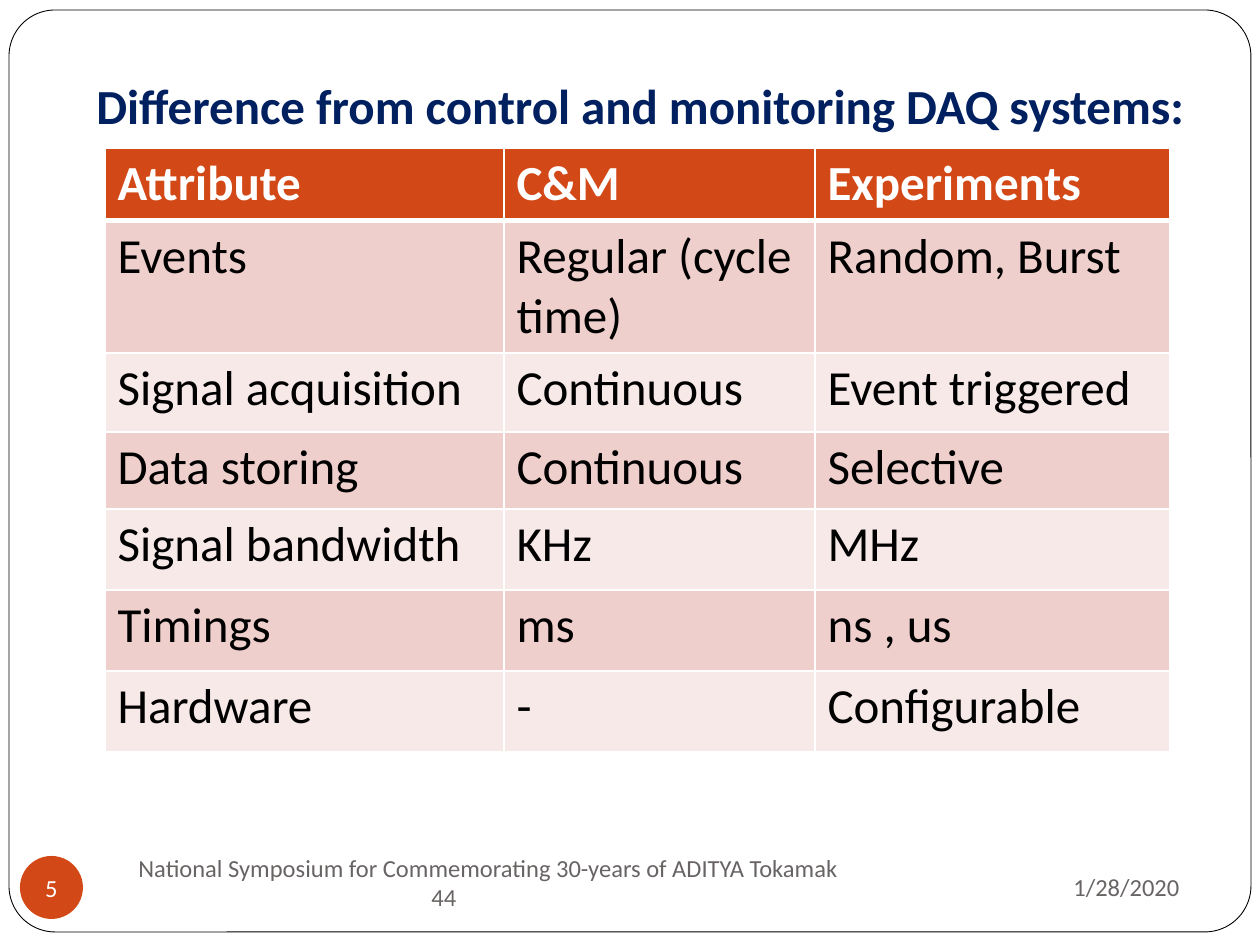
import lxml.etree
import pptx
import pptx.dml.color
import pptx.enum.shapes
import pptx.enum.text
import pptx.oxml.ns
import pptx.util

EMU_PER_PX = 914400 // 126
COLORS = {
    "white": "FFFFFF", "black": "000000", "accent": "D34817", "navy": "002060",
    "gray": "696464", "dark_band": "EFCFCC", "light_band": "F7E9E8",
}
ALIGN = pptx.enum.text.PP_ALIGN
ANCHOR = pptx.enum.text.MSO_ANCHOR
SHAPE = pptx.enum.shapes.MSO_SHAPE
COLUMN_WIDTHS = [399, 311, 355]
ROW_HEIGHTS = [63, 81, 79, 77, 81, 81, 81]
ROWS = [
    ["Attribute", "C&M", "Experiments"],
    ["Events", "Regular (cycle time)", "Random, Burst"],
    ["Signal acquisition", "Continuous", "Event triggered"],
    ["Data storing", "Continuous", "Selective"],
    ["Signal bandwidth", "KHz", "MHz"],
    ["Timings", "ms", "ns , us"],
    ["Hardware", "-", "Configurable"],
]


def px(length):
    """Turn pixels into EMU."""
    return pptx.util.Emu(length * EMU_PER_PX)


def rgb(name):
    """Look up a named colour."""
    return pptx.dml.color.RGBColor.from_string(COLORS[name])


def write(para, text, size=14, color="gray", bold=False, align=ALIGN.LEFT, indent=0):
    """Write one formatted paragraph."""
    para.alignment = align
    if indent:
        properties = para._p.get_or_add_pPr()
        properties.set("marL", str(px(indent)))
        properties.set("indent", "0")
    span = para.add_run()
    span.text = text
    span.font.name = "Calibri"
    span.font.size = pptx.util.Pt(size)
    span.font.bold = bold
    span.font.color.rgb = rgb(color)


def add_text_box(page, box, anchor=ANCHOR.MIDDLE):
    """Add a wrapping text box and return its frame."""
    frame = page.shapes.add_textbox(*map(px, box)).text_frame
    frame.word_wrap = True
    frame.vertical_anchor = anchor
    return frame


def add_plain_shape(page, kind, box, fill):
    """Add a filled shape with neither shadow nor line."""
    shape = page.shapes.add_shape(kind, *map(px, box))
    shape.shadow.inherit = False
    shape.fill.solid()
    shape.fill.fore_color.rgb = rgb(fill)
    shape.line.fill.background()
    return shape


def add_frame(page, box):
    """Draw the rounded page outline."""
    frame = add_plain_shape(page, SHAPE.ROUNDED_RECTANGLE, box, "white")
    frame.adjustments[0] = 0.05
    frame.line.color.rgb = rgb("black")
    frame.line.width = pptx.util.Pt(0.5)


def add_title(page, box):
    """Place the heading."""
    frame = add_text_box(page, box, ANCHOR.BOTTOM)
    frame.margin_bottom = px(13)
    write(frame.paragraphs[0], "Difference from control and monitoring DAQ systems:",
          size=28, color="navy", bold=True)


def set_borders(cell, **widths):
    """Draw white cell borders with widths in points."""
    properties = cell._tc.get_or_add_tcPr()
    for position, side in enumerate("LRTB"):
        line = lxml.etree.Element(pptx.oxml.ns.qn(f"a:ln{side}"))
        line.set("w", str(pptx.util.Pt(widths.get(side, 1))))
        fill = lxml.etree.SubElement(line, pptx.oxml.ns.qn("a:solidFill"))
        lxml.etree.SubElement(fill, pptx.oxml.ns.qn("a:srgbClr")).set("val", COLORS["white"])
        properties.insert(position, line)


def add_comparison(page, left, top):
    """Place the attribute table with its banded rows."""
    table = page.shapes.add_table(
        len(ROWS), len(COLUMN_WIDTHS), px(left), px(top),
        px(sum(COLUMN_WIDTHS)), px(sum(ROW_HEIGHTS))).table
    for column, width in zip(table.columns, COLUMN_WIDTHS):
        column.width = px(width)
    for index, (row, height, texts) in enumerate(zip(table.rows, ROW_HEIGHTS, ROWS)):
        row.height = px(height)
        header = index == 0
        fill = "accent" if header else "dark_band" if index % 2 else "light_band"
        for cell, text in zip(row.cells, texts):
            cell.fill.solid()
            cell.fill.fore_color.rgb = rgb(fill)
            set_borders(cell, T=3 if index == 1 else 1, B=3 if header else 1)
            write(cell.text_frame.paragraphs[0], text, size=28,
                  color="white" if header else "black", bold=header)


def add_footer(page, left, top):
    """Place the page number, the event name and the date."""
    badge = add_plain_shape(page, SHAPE.OVAL, (left, top, 63, 63), "accent")
    frame = badge.text_frame
    frame.margin_left = frame.margin_right = frame.margin_top = frame.margin_bottom = 0
    frame.word_wrap = False
    frame.vertical_anchor = ANCHOR.MIDDLE
    write(frame.paragraphs[0], "5", color="white", align=ALIGN.CENTER)

    event = add_text_box(page, (left + 106, top - 5, 766, 63))
    write(event.paragraphs[0], "National Symposium for Commemorating 30-years of ADITYA Tokamak")
    write(event.add_paragraph(), "44", indent=293)

    date = add_text_box(page, (left + 831, top - 2, 341, 66))
    write(date.paragraphs[0], "1/28/2020", align=ALIGN.RIGHT)


def main():
    """Build and save the deck."""
    deck = pptx.Presentation()
    deck.slide_width, deck.slide_height = px(1260), px(945)
    page = deck.slides.add_slide(deck.slide_layouts[6])
    add_frame(page, (9, 10, 1242, 922))
    add_comparison(page, 105, 148)
    add_title(page, (84, 84, 1134, 63))
    add_footer(page, 20, 856)
    deck.save("out.pptx")


if __name__ == "__main__":
    main()
